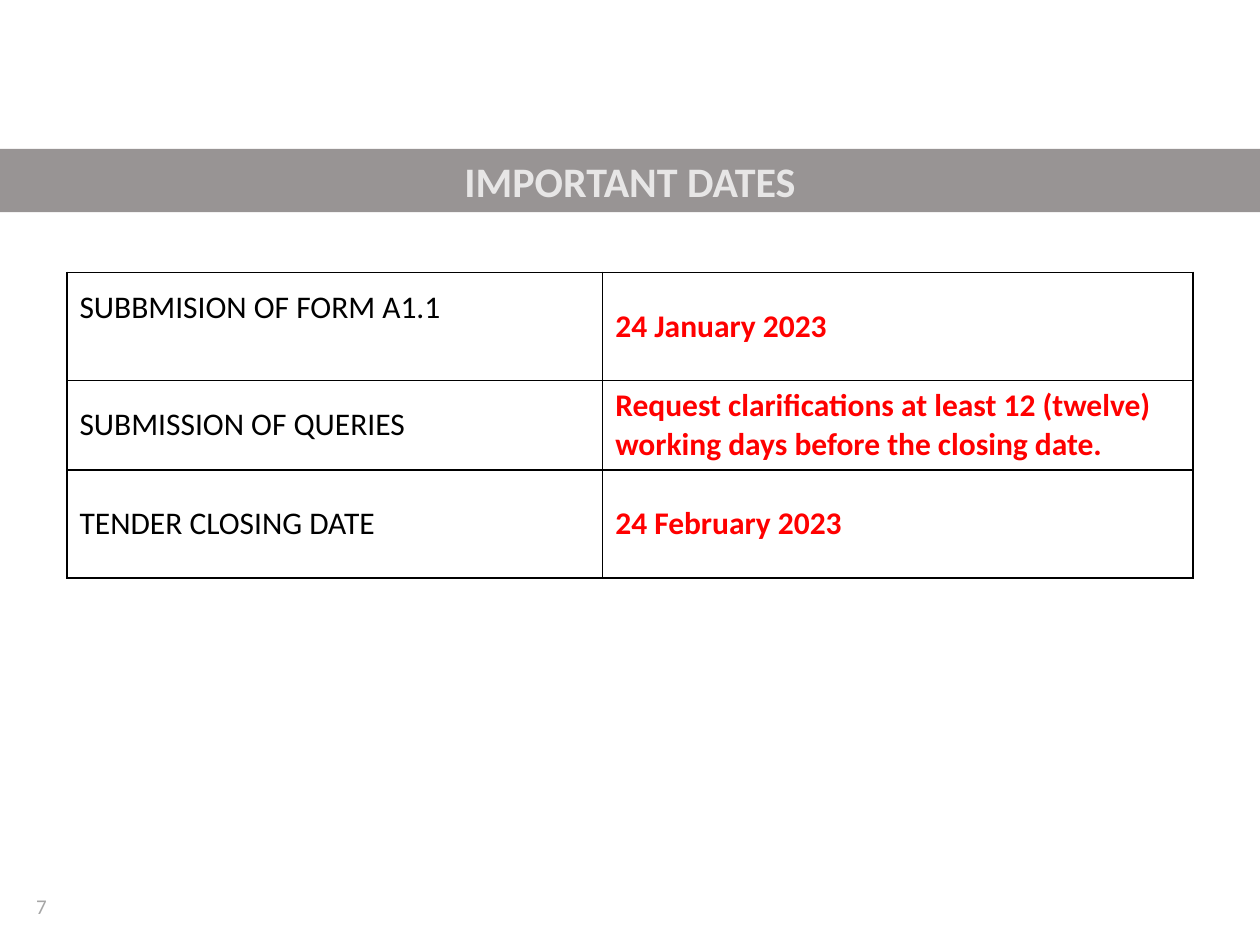
from dataclasses import dataclass

from lxml import etree
from pptx import Presentation
from pptx import util as u
from pptx.dml.color import RGBColor
from pptx.enum import shapes, text
from pptx.oxml import ns

BLACK = RGBColor(0x00, 0x00, 0x00)
WHITE = RGBColor(0xFF, 0xFF, 0xFF)
RED = RGBColor(0xFF, 0x00, 0x00)
BAND_GREY = RGBColor(0x98, 0x94, 0x94)
TITLE_GREY = RGBColor(0xE7, 0xE6, 0xE6)
NUMBER_GREY = RGBColor(0xA6, 0xA6, 0xA6)
FONT = "Calibri"


@dataclass
class DateRow:
    label: str
    date: str
    height: float
    label_bottom: float = 0.13


DATE_ROWS = [
    DateRow("SUBBMISION OF FORM A1.1", "24 January 2023", 2.18, 0.9),
    DateRow("SUBMISSION OF QUERIES",
            "Request clarifications at least 12 (twelve) working days before the closing date.", 1.8),
    DateRow("TENDER CLOSING DATE", "24 February 2023", 2.18),
]
COLUMN_WIDTHS = (10.8, 11.9)


def write(frame, words: str, *, size: float, color: RGBColor, bold: bool = False,
          align=text.PP_ALIGN.LEFT) -> None:
    frame.word_wrap = True
    para = frame.paragraphs[0]
    para.alignment = align
    span = para.add_run()
    span.text = words
    span.font.name = FONT
    span.font.size = u.Pt(size)
    span.font.bold = bold
    span.font.color.rgb = color


def add_borders(cell, color: RGBColor, width: float) -> None:
    properties = cell._tc.get_or_add_tcPr()
    for position, side in enumerate(("lnL", "lnR", "lnT", "lnB")):
        line = etree.Element(ns.qn(f"a:{side}"), w=str(u.Pt(width)))
        fill = etree.SubElement(line, ns.qn("a:solidFill"))
        etree.SubElement(fill, ns.qn("a:srgbClr"), val=str(color))
        properties.insert(position, line)


def fill_cell(cell, words: str, color: RGBColor, bold: bool) -> None:
    cell.fill.solid()
    cell.fill.fore_color.rgb = WHITE
    cell.vertical_anchor = text.MSO_ANCHOR.MIDDLE
    write(cell.text_frame, words, size=18, color=color, bold=bold)
    add_borders(cell, BLACK, 1)


def add_dates_table(page, rows: list[DateRow]) -> None:
    table = page.shapes.add_table(
        len(rows), len(COLUMN_WIDTHS), u.Cm(1.35), u.Cm(5.49),
        u.Cm(sum(COLUMN_WIDTHS)), u.Cm(sum(row.height for row in rows))).table
    table.first_row = False
    table.horz_banding = False
    for column, width in zip(table.columns, COLUMN_WIDTHS):
        column.width = u.Cm(width)
    for index, row in enumerate(rows):
        table.rows[index].height = u.Cm(row.height)
        label_cell = table.cell(index, 0)
        fill_cell(label_cell, row.label, BLACK, False)
        label_cell.margin_bottom = u.Cm(row.label_bottom)
        fill_cell(table.cell(index, 1), row.date, RED, True)


def add_title_band(page, words: str, width: int) -> None:
    band = page.shapes.add_shape(shapes.MSO_SHAPE.RECTANGLE, 0, u.Cm(3), width, u.Cm(1.28))
    band.shadow.inherit = False
    band.fill.solid()
    band.fill.fore_color.rgb = BAND_GREY
    band.line.fill.background()
    write(band.text_frame, words, size=24, color=TITLE_GREY, bold=True,
          align=text.PP_ALIGN.CENTER)


def add_page_number(page, words: str) -> None:
    box = page.shapes.add_textbox(u.Cm(0.48), u.Cm(17.88), u.Cm(5.72), u.Cm(1.02))
    write(box.text_frame, words, size=12, color=NUMBER_GREY)


def main() -> None:
    deck = Presentation()
    deck.slide_width = u.Cm(25.4)
    deck.slide_height = u.Cm(19.05)
    page = deck.slides.add_slide(deck.slide_layouts[6])
    add_page_number(page, "7")
    add_dates_table(page, DATE_ROWS)
    add_title_band(page, "IMPORTANT DATES", deck.slide_width)
    deck.save("out.pptx")


if __name__ == "__main__":
    main()
